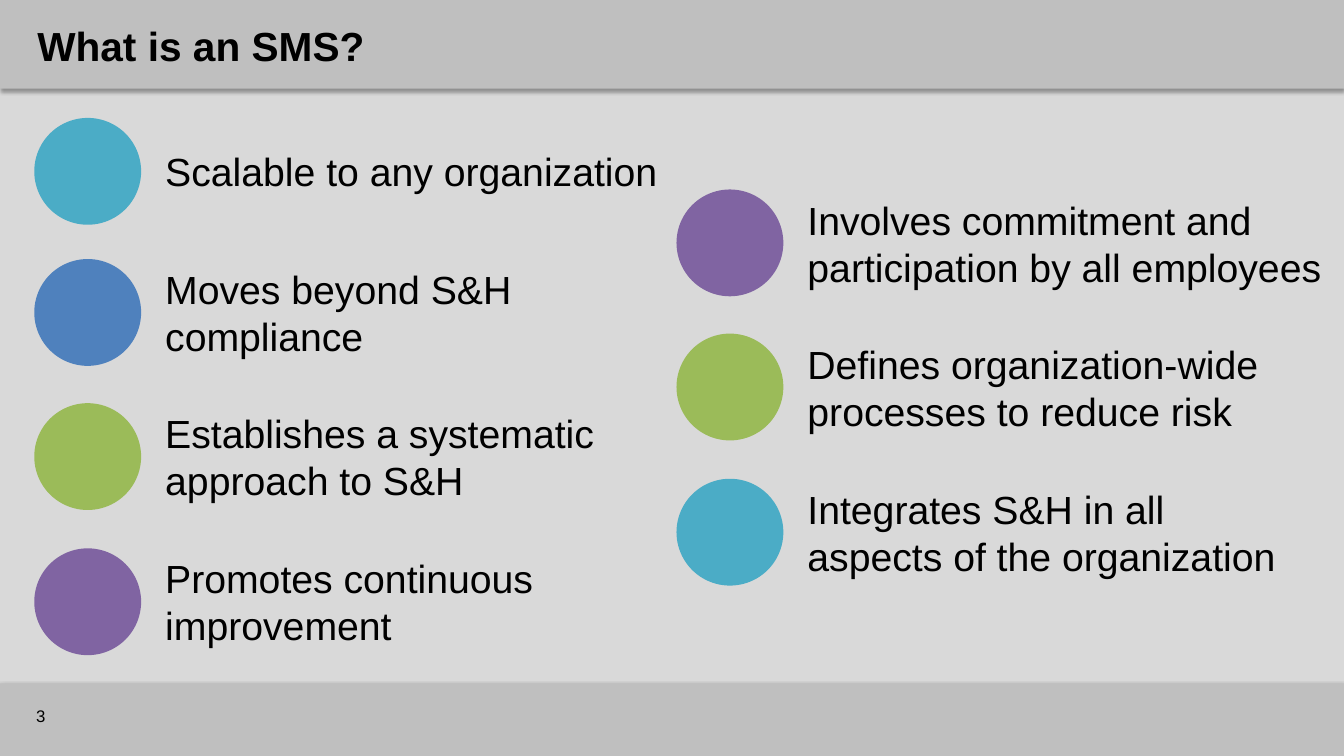
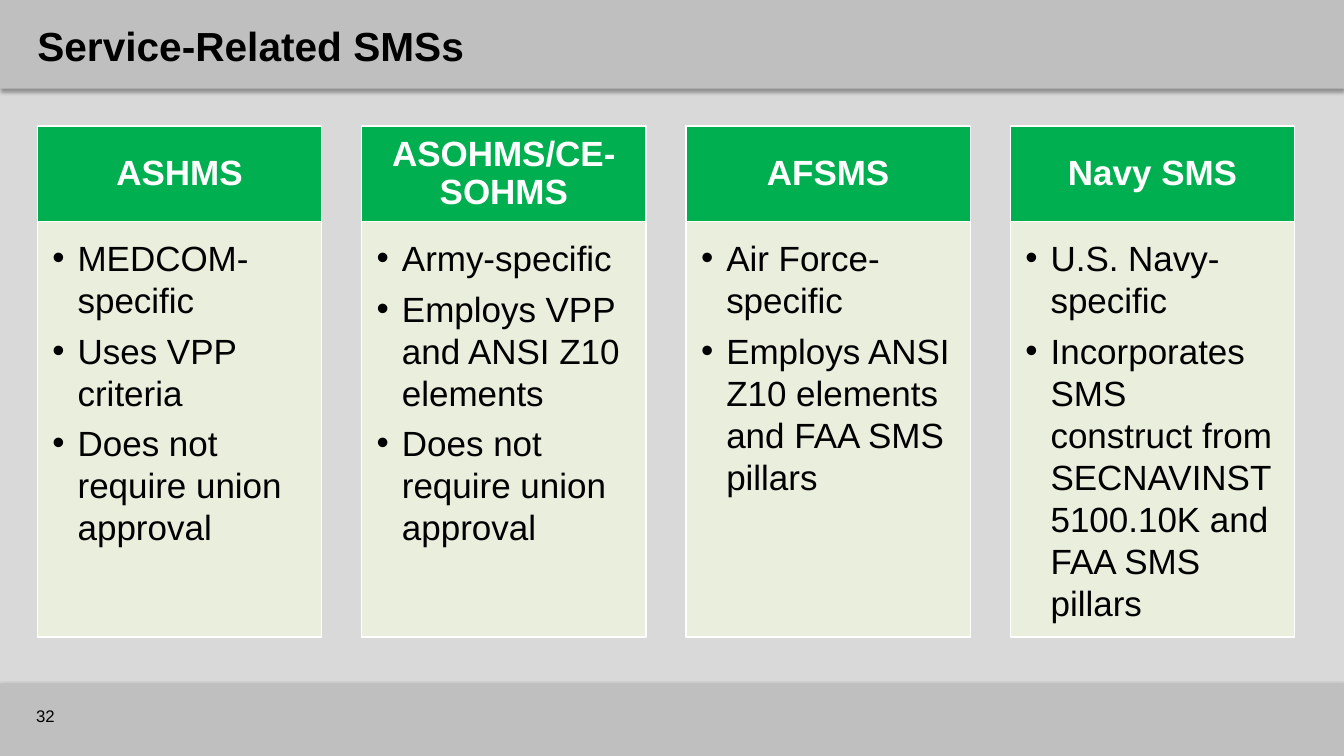
from lxml import etree
from pptx import Presentation
from pptx.dml.color import RGBColor
from pptx.enum import shapes, text
from pptx.oxml import ns
from pptx.util import Inches, Pt

WIDE, HIGH = 13.33, 7.5
FONT = "Arial"
HUES = {
    "page": "D9D9D9", "band": "BFBFBF", "ink": "000000", "white": "FFFFFF",
    "head": "00B050", "body": "EBF1DE", "aqua": "4BACC6",
    "blue": "4F81BD", "green": "9BBB59", "plum": "8064A2",
}
TRAITS = [
    (0.34, [
        (1.17, "aqua", 5.15, "Scalable to any organization"),
        (2.57, "blue", 5.15, "Moves beyond S&H compliance"),
        (4.0, "green", 5.15, "Establishes a systematic approach to S&H"),
        (5.44, "plum", 5.15, "Promotes continuous improvement"),
    ]),
    (6.71, [
        (1.88, "plum", 5.42, "Involves commitment and participation by all employees"),
        (3.31, "green", 5.42, "Defines organization-wide processes to reduce risk"),
        (4.75, "aqua", 4.92, "Integrates S&H in all aspects of the organization"),
    ]),
]
SYSTEMS = [
    ("ASHMS", ["MEDCOM-specific", "Uses VPP criteria",
               "Does not require union approval"]),
    ("ASOHMS/CE-SOHMS", ["Army-specific", "Employs VPP and ANSI Z10 elements",
                         "Does not require union approval"]),
    ("AFSMS", ["Air Force-specific",
               "Employs ANSI Z10 elements and FAA SMS pillars"]),
    ("Navy SMS", ["U.S. Navy-specific",
                  "Incorporates SMS construct from SECNAVINST 5100.10K and FAA SMS pillars"]),
]


def hue(name):
    return RGBColor.from_string(HUES[name])


def sub(node, tag, **attrs):
    return etree.SubElement(node, ns.qn(tag), attrs)


def place(shape, *box):
    shape.left, shape.top, shape.width, shape.height = map(Inches, box)


def style(par, size, color="ink", bold=False, align=text.PP_ALIGN.LEFT):
    par.alignment = align
    par.font.name, par.font.size = FONT, Pt(size)
    par.font.bold, par.font.color.rgb = bold, hue(color)


def draw(slide, kind, box, fill, line=None):
    shape = slide.shapes.add_shape(kind, *map(Inches, box))
    shape.fill.solid()
    shape.fill.fore_color.rgb = hue(fill)
    if line:
        shape.line.color.rgb = hue(line)
        shape.line.width = Pt(1)
    else:
        shape.line.fill.background()
    shape.shadow.inherit = False
    return shape


def pad(frame, left, top, right, bottom):
    frame.margin_left, frame.margin_top = Inches(left), Inches(top)
    frame.margin_right, frame.margin_bottom = Inches(right), Inches(bottom)


def label(slide, box, words, size):
    frame = slide.shapes.add_textbox(*map(Inches, box)).text_frame
    frame.word_wrap = True
    frame.vertical_anchor = text.MSO_ANCHOR.MIDDLE
    frame.text = words
    style(frame.paragraphs[0], size)


def add_bands(slide, layout):
    for spot, (top, high) in enumerate([(6.78, 0.72), (0, 0.88)]):
        band = draw(slide, shapes.MSO_SHAPE.RECTANGLE, (0, top, WIDE, high), "band")
        glow = band.element.spPr.find(ns.qn("a:effectLst"))
        shade = sub(glow, "a:outerShdw", blurRad=str(Pt(3.1)), dist=str(Pt(1.8)),
                    dir="5400000", rotWithShape="0")
        tint = sub(shade, "a:srgbClr", val=HUES["ink"])
        sub(tint, "a:alpha", val="35000")
        layout.shapes.element.insert(2 + spot, band.element)


def add_page(deck, layout, title, number):
    slide = deck.slides.add_slide(layout)
    head = slide.shapes.title
    place(head, 0.27, 0.14, 12.93, 0.62)
    head.text_frame.text = title
    head.text_frame.vertical_anchor = text.MSO_ANCHOR.MIDDLE
    style(head.text_frame.paragraphs[0], 29, bold=True)
    label(slide, (0.26, 6.9, 1, 0.4), number, 12)
    return slide


def add_traits(slide):
    dot = 1.06
    for left, rows in TRAITS:
        for top, color, wide, words in rows:
            draw(slide, shapes.MSO_SHAPE.OVAL, (left, top, dot, dot), color)
            label(slide, (left + 1.2, top + 0.01, wide, 1.04), words, 28)


def add_bullet(par):
    props = par._p.get_or_add_pPr()
    props.set("marL", str(Inches(0.25)))
    props.set("indent", str(Inches(-0.25)))
    sub(props, "a:buFont", typeface=FONT)
    sub(props, "a:buChar", char="•")


def add_systems(slide):
    left, right, top, wide, high = 0.37, 12.84, 1.25, 2.82, 0.95
    step = (right - left - wide) / (len(SYSTEMS) - 1)
    rect = shapes.MSO_SHAPE.RECTANGLE
    for col, (name, points) in enumerate(SYSTEMS):
        x = left + col * step
        head = draw(slide, rect, (x, top, wide, high), "head", "white").text_frame
        pad(head, 0.19, 0.11, 0.19, 0.11)
        head.word_wrap = True
        head.vertical_anchor = text.MSO_ANCHOR.MIDDLE
        head.text = name
        style(head.paragraphs[0], 25, "white", True, text.PP_ALIGN.CENTER)
        head.paragraphs[0].line_spacing = 0.9

        card = draw(slide, rect, (x, top + high, wide, 4.12), "body", "white")
        tint = card.element.spPr.find(ns.qn("a:solidFill"))[0]
        sub(tint, "a:alpha", val="90000")
        body = card.text_frame
        pad(body, 0.15, 0.15, 0.19, 0.22)
        body.word_wrap = True
        body.vertical_anchor = text.MSO_ANCHOR.TOP
        body.text = "\n".join(points)
        for par in body.paragraphs:
            add_bullet(par)
            style(par, 25)
            par.space_after = Pt(6)


def main():
    deck = Presentation()
    deck.slide_width, deck.slide_height = Inches(WIDE), Inches(HIGH)
    fill = deck.slide_master.background.fill
    fill.solid()
    fill.fore_color.rgb = hue("page")
    layout = deck.slide_layouts.get_by_name("Title Only")
    first = add_page(deck, layout, "What is an SMS?", "3")
    add_bands(first, layout)
    add_traits(first)
    add_systems(add_page(deck, layout, "Service-Related SMSs", "32"))
    deck.save("out.pptx")


if __name__ == "__main__":
    main()
